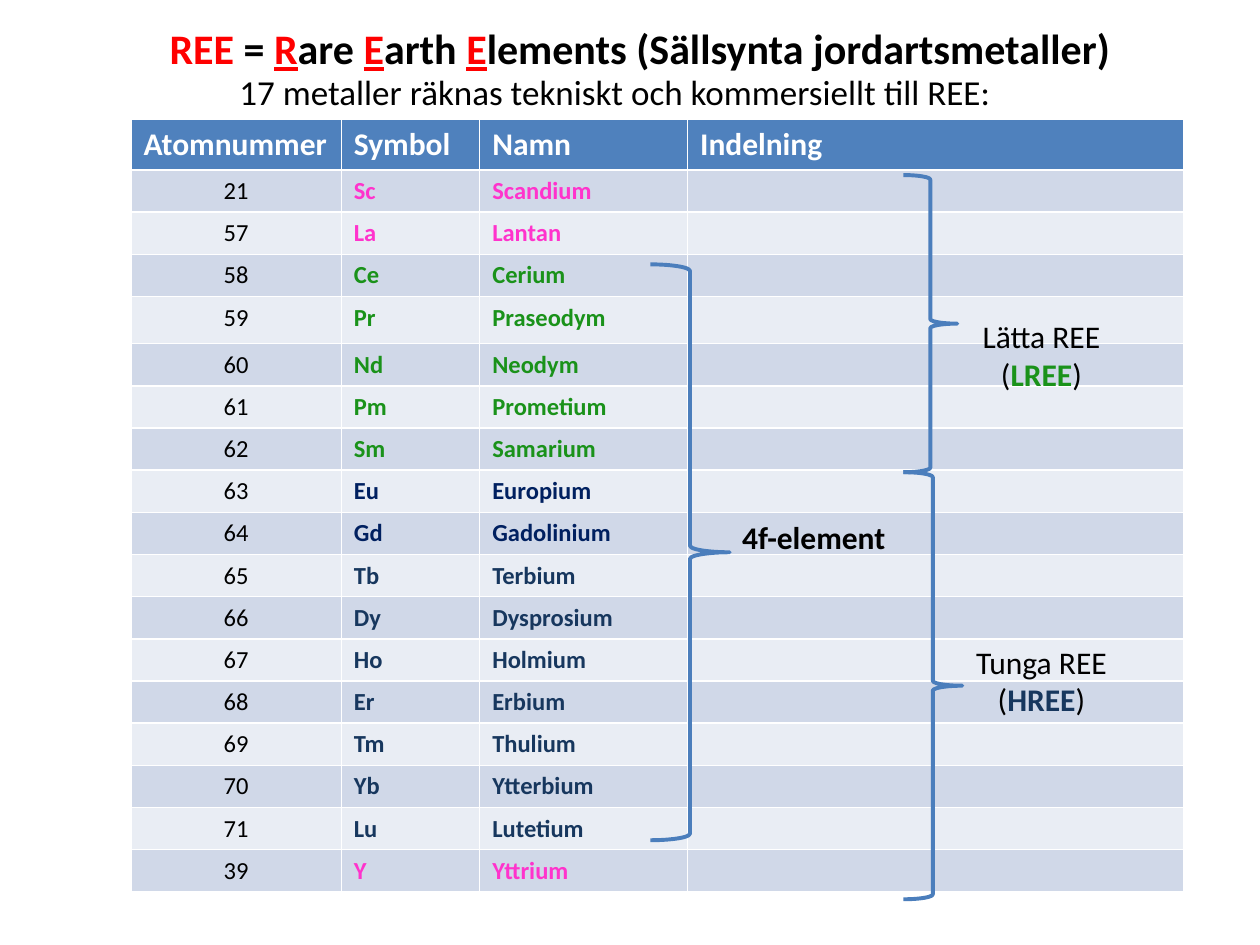
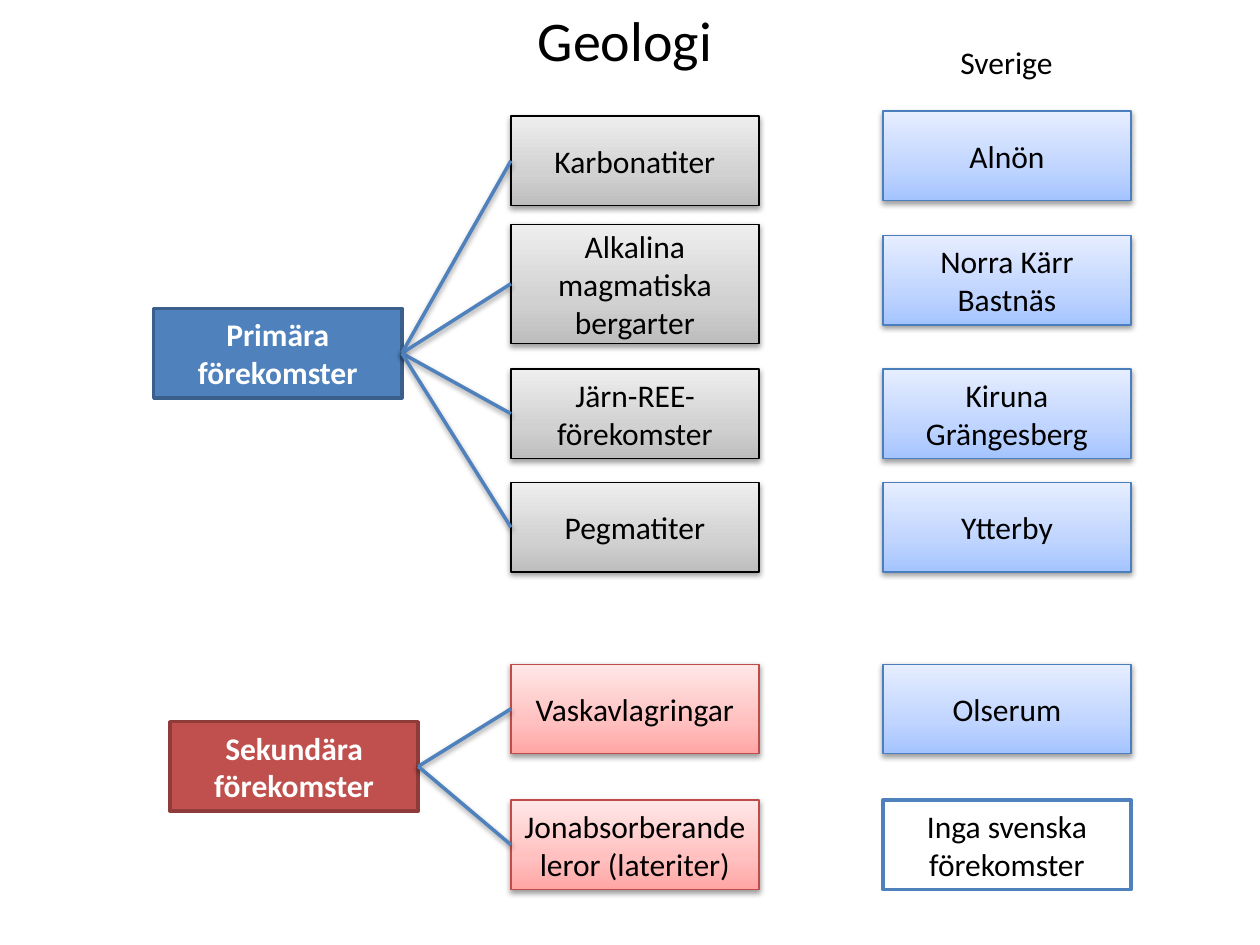
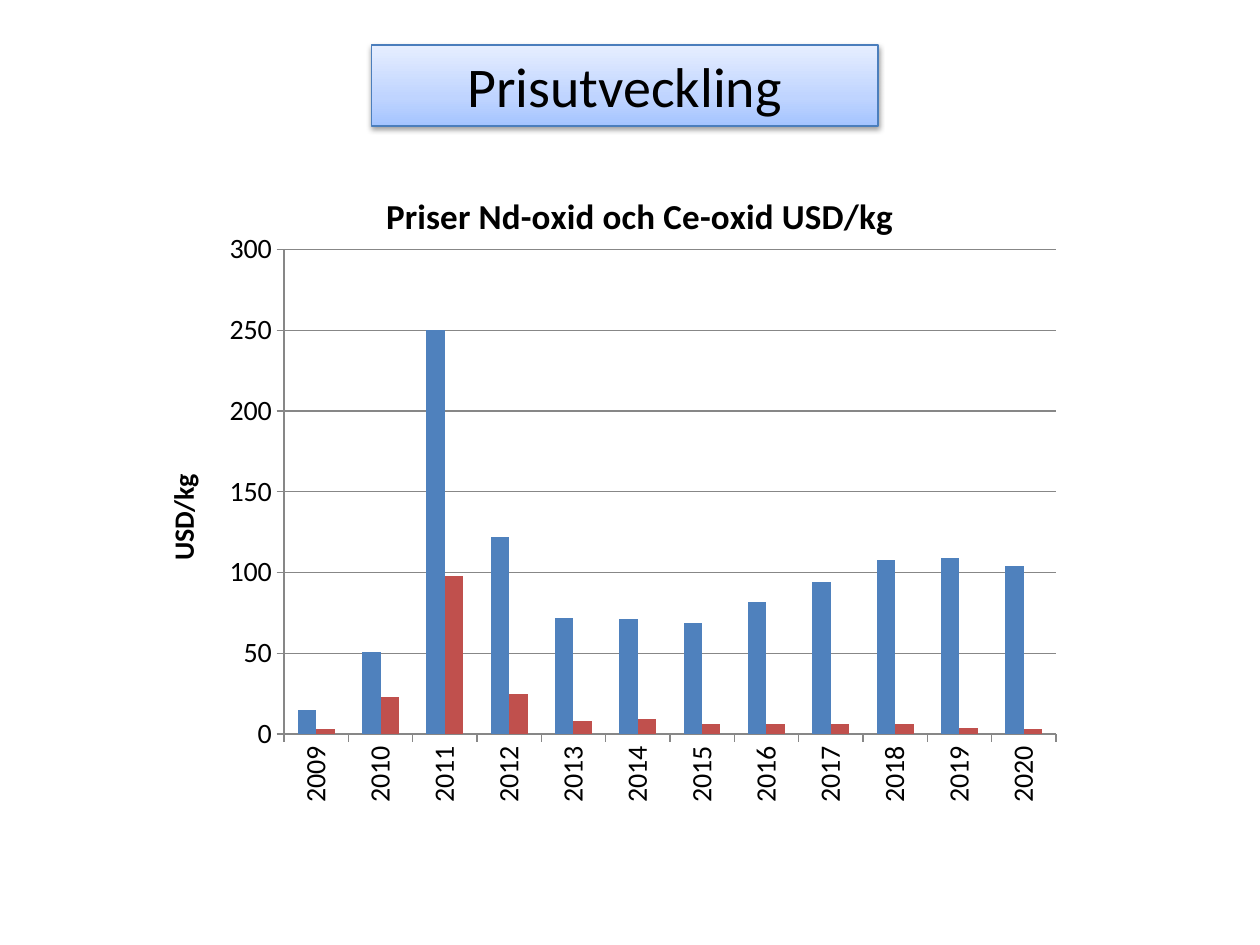
from copy import deepcopy
from dataclasses import dataclass
from typing import NamedTuple

from lxml.etree import SubElement
from pptx import Presentation
from pptx.chart.data import CategoryChartData as ChartData
from pptx.dml.color import RGBColor
from pptx.enum.chart import XL_CHART_TYPE as Chart, XL_TICK_MARK as Tick
from pptx.enum.shapes import MSO_CONNECTOR as Link, MSO_SHAPE as Geo
from pptx.enum.text import MSO_ANCHOR as Anchor, MSO_AUTO_SIZE as Fit, PP_ALIGN as Align
from pptx.oxml.ns import qn
from pptx.util import Cm, Pt

FONT = "Calibri"
HEX = {
    "black": "000000", "white": "FFFFFF", "red": "FF0000", "blue": "4F81BD",
    "edge": "4B7EBC", "steel": "3A5F8C", "brick": "C0504D", "rust": "8E3B39",
    "rose": "BF4C48", "pink": "FF33CC", "green": "1A921A", "navy": "002060",
    "slate": "17375E", "dark": "D0D8E8", "light": "E9EDF4", "grid": "878787",
}
GRADS = {
    "grey": ("BDBDBD", "D1D1D1", "EEEEEE"),
    "pale": ("FFA6A5", "FFC0BF", "FFE7E7"),
    "sky": ("A4C4FF", "BFD4FF", "E6EEFF"),
}
STOPS = (0, 0.35, 1)


class Area(NamedTuple):
    """Left, top, width and height in centimetres."""
    left: float
    top: float
    width: float
    height: float

    def cm(self) -> list:
        return [Cm(side) for side in self]


class Piece(NamedTuple):
    text: str
    ink: str = "black"
    bold: bool = False
    under: bool = False


@dataclass
class Look:
    fill: str
    line: str
    width: float = 0.75
    ink: str = "black"
    bold: bool = False


@dataclass
class Branch:
    """A kind of deposit, its height on the slide and its Swedish sites."""
    name: str
    top: float
    sites: str
    tall: float = 1.8


@dataclass
class Group:
    name: str
    left: float
    top: float
    root: Look
    leaf: Look
    kids: list


SKY = Look("sky", "edge")
BLANK = Look("white", "blue", 2)
NONE = "Inga svenska\nförekomster"
GROUPS = [
    Group("Primära förekomster", 3.1, 6.22,
          Look("blue", "steel", 2, "white", True), Look("grey", "black"), [
              Branch("Karbonatiter", 2.34, "Alnön"),
              Branch("Alkalina magmatiska bergarter", 4.52, "Norra Kärr\nBastnäs", 2.4),
              Branch("Järn-REE-förekomster", 7.44, "Kiruna\nGrängesberg"),
              Branch("Pegmatiter", 9.73, "Ytterby")]),
    Group("Sekundära förekomster", 3.43, 14.55,
          Look("brick", "rust", 2, "white", True), Look("pale", "rose"), [
              Branch("Vaskavlagringar", 13.39, "Olserum"),
              Branch("Jonabsorberande leror (lateriter)", 16.13, NONE)]),
]
SITE_TOPS = {"Alnön": 2.24, "Norra Kärr\nBastnäs": 4.75}

HEADS = ("Atomnummer", "Symbol", "Namn", "Indelning")
WIDTHS = (4.24, 2.79, 4.19, 10.01)
METALS = [
    (21, "Sc", "Scandium", "pink"), (57, "La", "Lantan", "pink"),
    (58, "Ce", "Cerium", "green"), (59, "Pr", "Praseodym", "green"),
    (60, "Nd", "Neodym", "green"), (61, "Pm", "Prometium", "green"),
    (62, "Sm", "Samarium", "green"), (63, "Eu", "Europium", "navy"),
    (64, "Gd", "Gadolinium", "navy"), (65, "Tb", "Terbium", "slate"),
    (66, "Dy", "Dysprosium", "slate"), (67, "Ho", "Holmium", "slate"),
    (68, "Er", "Erbium", "slate"), (69, "Tm", "Thulium", "slate"),
    (70, "Yb", "Ytterbium", "slate"), (71, "Lu", "Lutetium", "slate"),
    (39, "Y", "Yttrium", "pink"),
]
BRACES = [Area(13.11, 5.33, 1.6, 11.61), Area(18.21, 3.53, 1.09, 5.99),
          Area(18.21, 9.52, 1.19, 8.61)]

PRICES = {
    "Nd-oxid": ("blue", (15, 51, 250, 122, 72, 71, 69, 82, 94, 108, 109, 104)),
    "Ce-oxid": ("brick", (3, 23, 98, 25, 8, 9, 6, 6, 6, 6, 4, 3)),
}
PLOT = {"x": 0.134, "y": 0.129, "w": 0.794, "h": 0.74}


def rgb(name: str) -> RGBColor:
    return RGBColor.from_string(HEX[name])


def style(font, size: float, ink: str = "black", bold: bool = False) -> None:
    font.name, font.size, font.bold = FONT, Pt(size), bold
    font.color.rgb = rgb(ink)


def write(frame, lines: list[list[Piece]], size: float, align=Align.CENTER) -> None:
    """Fill a text frame; runs get a format of their own only where they differ."""
    frame.word_wrap = True
    for i, line in enumerate(lines):
        para = frame.paragraphs[0] if i == 0 else frame.add_paragraph()
        para.alignment = align
        base = line[0]
        same = all(piece[1:] == base[1:] for piece in line)
        style(para.font, size, base.ink, base.bold)
        for piece in line:
            run = para.add_run()
            run.text = piece.text
            if not same:
                style(run.font, size, piece.ink, piece.bold)
                run.font.underline = piece.under


def plain(text: str, ink: str = "black", bold: bool = False) -> list[list[Piece]]:
    return [[Piece(line, ink, bold)] for line in text.split("\n")]


def shade(props) -> None:
    """Add the soft drop shadow after the fill and line."""
    cast = SubElement(SubElement(props, qn("a:effectLst")), qn("a:outerShdw"),
                      blurRad="40000", dist="20000", dir="5400000", rotWithShape="0")
    ink = SubElement(cast, qn("a:srgbClr"), val=HEX["black"])
    SubElement(ink, qn("a:alpha"), val="38000")


def paint(shape, look: Look) -> None:
    fill = shape.fill
    shape.line.color.rgb = rgb(look.line)
    shape.line.width = Pt(look.width)
    if look.fill not in GRADS:
        shape.shadow.inherit = False
        fill.solid()
        fill.fore_color.rgb = rgb(look.fill)
        return
    fill.gradient()
    fill.gradient_angle = 90
    stops = shape._element.spPr.find(".//" + qn("a:gsLst"))
    stops.append(deepcopy(stops[0]))
    for stop, spot, tone in zip(fill.gradient_stops, STOPS, GRADS[look.fill]):
        stop.position = spot
        stop.color.rgb = RGBColor.from_string(tone)
    shade(shape._element.spPr)


def head(deck, area: Area, lines: list[list[Piece]], size: float):
    """Add a slide and set its title; return both."""
    slide = deck.slides.add_slide(deck.slide_layouts[5])
    title = slide.shapes.title
    title.left, title.top, title.width, title.height = area.cm()
    title.text_frame.auto_size = Fit.NONE
    title.text_frame.vertical_anchor = Anchor.TOP
    write(title.text_frame, lines, size)
    return slide, title


def label(slide, area: Area, lines: list[list[Piece]], size: float = 18,
          align=Align.CENTER) -> None:
    write(slide.shapes.add_textbox(*area.cm()).text_frame, lines, size, align)


def box(slide, area: Area, text: str, look: Look):
    shape = slide.shapes.add_shape(Geo.FLOWCHART_PROCESS, *area.cm())
    paint(shape, look)
    shape.text_frame.vertical_anchor = Anchor.MIDDLE
    write(shape.text_frame, plain(text, look.ink, look.bold), 18)
    return shape


def join(slide, root, leaf) -> None:
    line = slide.shapes.add_connector(Link.STRAIGHT, 0, 0, 0, 0)
    line.begin_connect(root, 3)
    line.end_connect(leaf, 1)
    line.line.color.rgb = rgb("blue")
    line.line.width = Pt(2)
    shade(line._element.spPr)


def brace(slide, area: Area) -> None:
    shape = slide.shapes.add_shape(Geo.RIGHT_BRACE, *area.cm())
    shape.shadow.inherit = False
    shape.fill.background()
    shape.line.color.rgb = rgb("edge")
    shape.line.width = Pt(2.25)


def put(cell, fill: str, text: str, size: float, ink: str, bold: bool,
        align=Align.LEFT) -> None:
    cell.fill.solid()
    cell.fill.fore_color.rgb = rgb(fill)
    if text:
        write(cell.text_frame, plain(text, ink, bold), size, align)
    else:
        SubElement(cell.text_frame.paragraphs[0]._p, qn("a:endParaRPr"), sz=str(size * 100))


def metals(slide) -> None:
    area = Area(2.64, 2.41, sum(WIDTHS), 15.54)
    grid = slide.shapes.add_table(len(METALS) + 1, len(HEADS), *area.cm()).table
    for col, width in zip(grid.columns, WIDTHS):
        col.width = Cm(width)
    for row in grid.rows:
        row.height = Cm(0.85)
    grid.rows[0].height = Cm(0.99)
    grid.rows[4].height = Cm(0.95)
    for c, text in enumerate(HEADS):
        put(grid.cell(0, c), "blue", text, 18, "white", True)
    for r, (number, sign, name, ink) in enumerate(METALS, 1):
        band = "dark" if r % 2 else "light"
        put(grid.cell(r, 0), band, str(number), 14, "black", False, Align.CENTER)
        for c, text in enumerate((sign, name, ""), 1):
            put(grid.cell(r, c), band, text, 14, ink, True)


def elements(deck) -> None:
    red, cap = Piece("REE", "red", True), ("red", True, True)
    title = [red, Piece(" = ", bold=True), Piece("R", *cap), Piece("are ", bold=True),
             Piece("E", *cap), Piece("arth ", bold=True), Piece("E", *cap),
             Piece("lements (Sällsynta jordartsmetaller)", bold=True)]
    slide, _ = head(deck, Area(1.9, 0.33, 22, 1.27), [title], 24)
    label(slide, Area(3.1, 1.3, 18.6, 1.12),
          plain("17 metaller räknas tekniskt och kommersiellt till REE:"), 20)
    metals(slide)
    for area in BRACES:
        brace(slide, area)
    label(slide, Area(14.71, 10.31, 3.5, 1.02), plain("4f-element", bold=True),
          align=Align.LEFT)
    for area, name, short, ink in (
            (Area(19.38, 6.27, 3.23, 1.8), "Lätta REE", "LREE", "green"),
            (Area(19, 12.83, 3.99, 1.8), "Tunga REE", "HREE", "slate")):
        label(slide, area, [[Piece(name)],
                            [Piece("("), Piece(short, ink, True), Piece(")")]])


def geology(deck) -> None:
    slide, _ = head(deck, Area(6.9, -0.02, 11.4, 1.63), plain("Geologi"), 32)
    label(slide, Area(16.89, 0.74, 6.8, 1.02), plain("Sverige"))
    for group in GROUPS:
        root = box(slide, Area(group.left, group.top, 5, 1.8), group.name, group.root)
        for kid in group.kids:
            leaf = box(slide, Area(10.3, kid.top, 5, kid.tall), kid.name, group.leaf)
            join(slide, root, leaf)
            top = SITE_TOPS.get(kid.sites, kid.top)
            box(slide, Area(17.8, top, 5, 1.8), kid.sites,
                BLANK if kid.sites == NONE else SKY)


def fix(chart) -> None:
    """Pin the inner plot area at a set place in the chart."""
    plot = chart._chartSpace.find(".//" + qn("c:plotArea"))
    for old in plot.findall(qn("c:layout")):
        plot.remove(old)
    frame = SubElement(plot, qn("c:layout"))
    plot.insert(0, frame)
    spot = SubElement(frame, qn("c:manualLayout"))
    SubElement(spot, qn("c:layoutTarget"), val="inner")
    for key in "xy":
        SubElement(spot, qn(f"c:{key}Mode"), val="edge")
    for key, part in PLOT.items():
        SubElement(spot, qn(f"c:{key}"), val=str(part))


def prices(deck) -> None:
    slide, title = head(deck, Area(7.49, 0.91, 10.21, 1.63), plain("Prisutveckling"), 32)
    paint(title, SKY)
    data = ChartData()
    data.categories = [str(year) for year in range(2009, 2021)]
    for name, (_, sums) in PRICES.items():
        data.add_series(name, sums)
    area = Area(3.1, 3.33, 19.6, 13.2)
    chart = slide.shapes.add_chart(Chart.COLUMN_CLUSTERED, *area.cm(), data).chart
    style(chart.font, 10)
    chart.has_legend = False
    years, costs = chart.category_axis, chart.value_axis
    for owner, text, size in ((chart.chart_title, "Priser Nd-oxid och Ce-oxid USD/kg", 20),
                              (costs.axis_title, "USD/kg", 16)):
        para = owner.text_frame.paragraphs[0]
        para.text = text
        style(para.font, size, bold=True)
        style(para.runs[0].font, size, bold=True)
    plot = chart.plots[0]
    plot.gap_width, plot.overlap, plot.vary_by_categories = 150, 0, False
    for bars, (ink, _) in zip(plot.series, PRICES.values()):
        bars.format.fill.solid()
        bars.format.fill.fore_color.rgb = rgb(ink)
    for axis in (years, costs):
        style(axis.tick_labels.font, 16)
        axis.major_tick_mark, axis.minor_tick_mark = Tick.OUTSIDE, Tick.NONE
        axis.format.line.color.rgb = rgb("grid")
    years._element.find(qn("c:txPr")).find(qn("a:bodyPr")).set("rot", "-5400000")
    costs.minimum_scale, costs.maximum_scale, costs.major_unit = 0, 300, 50
    costs.has_major_gridlines = True
    costs.major_gridlines.format.line.color.rgb = rgb("grid")
    fix(chart)


def main() -> None:
    deck = Presentation()
    deck.slide_width, deck.slide_height = Cm(25.4), Cm(19.05)
    for build in (elements, geology, prices):
        build(deck)
    deck.save("out.pptx")


if __name__ == "__main__":
    main()
